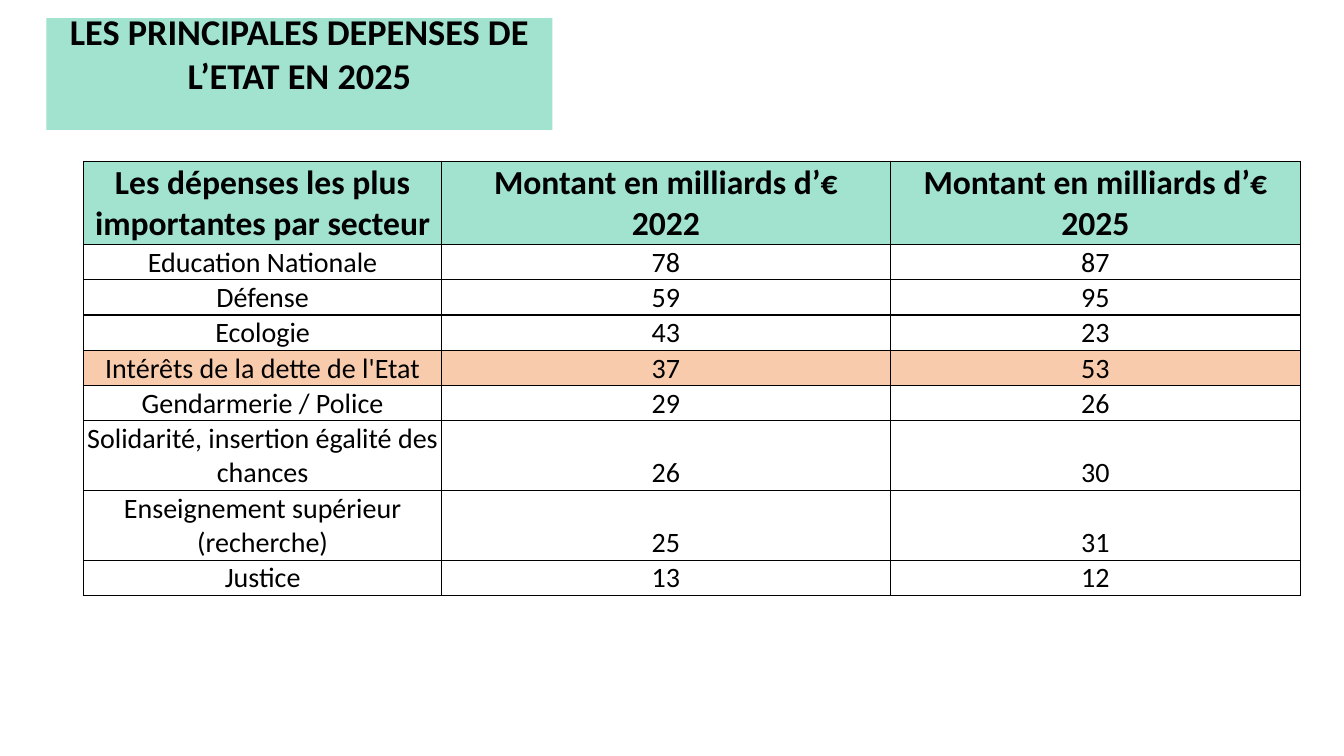
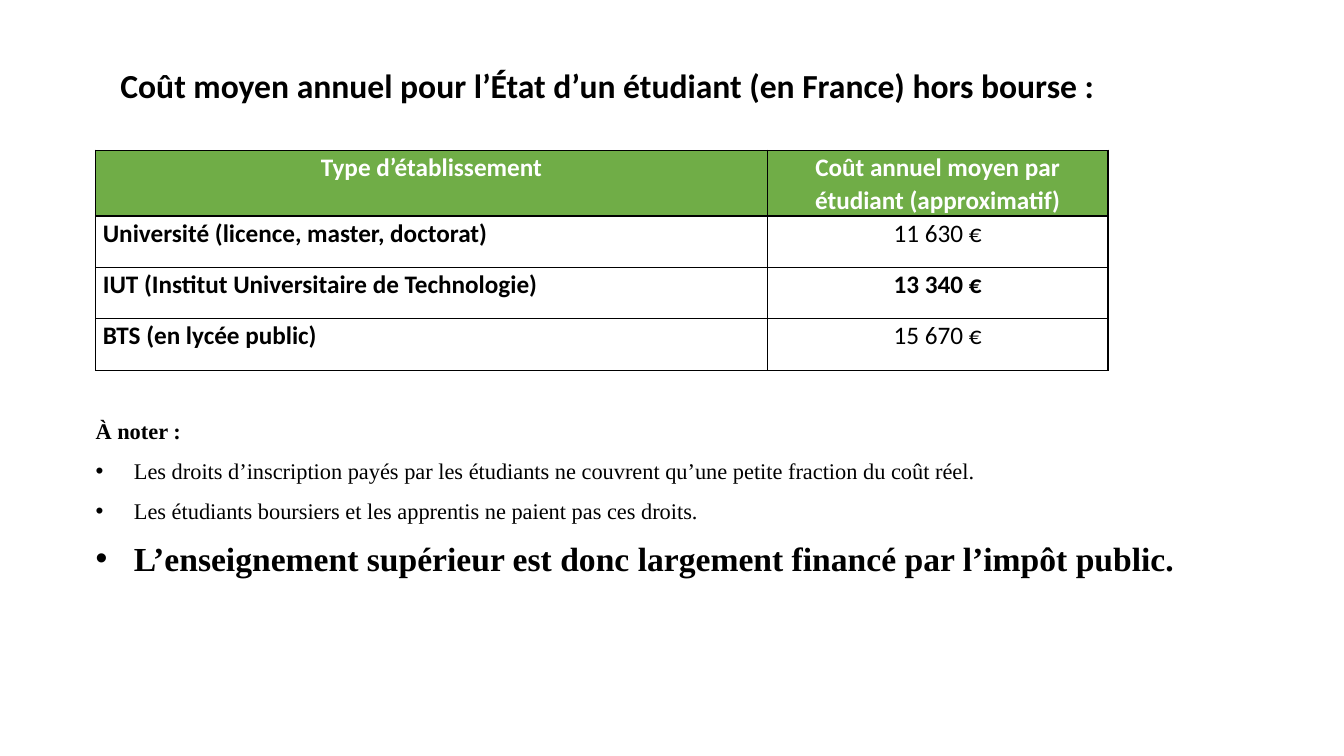
"""Two slides on state spending and the yearly cost of a student."""
from lxml import etree
from pptx import Presentation
from pptx import util as u
from pptx.dml.color import RGBColor
from pptx.enum import shapes, text
from pptx.oxml import ns

MINT = RGBColor(0xA1, 0xE3, 0xCF)
PEACH = RGBColor(0xF8, 0xCB, 0xAD)
GREEN = RGBColor(0x70, 0xAD, 0x47)
WHITE = RGBColor(255, 255, 255)
BLACK = RGBColor(0, 0, 0)
SANS, SERIF = "Calibri", "Times New Roman"
MID, LEFT = text.PP_ALIGN.CENTER, text.PP_ALIGN.LEFT
TOP, CORE, LOW = text.MSO_ANCHOR.TOP, text.MSO_ANCHOR.MIDDLE, text.MSO_ANCHOR.BOTTOM

HEAD = "LES PRINCIPALES DEPENSES DE L’ETAT EN 2025"
SPEND = [
    ("Les dépenses les plus importantes par secteur",
     "Montant en milliards d’€\n2022", "Montant en milliards d’€\n2025"),
    ("Education Nationale", 78, 87),
    ("Défense", 59, 95),
    ("Ecologie", 43, 23),
    ("Intérêts de la dette de l'Etat", 37, 53),
    ("Gendarmerie / Police", 29, 26),
    ("Solidarité, insertion égalité des chances", 26, 30),
    ("Enseignement supérieur (recherche)", 25, 31),
    ("Justice", 13, 12),
]
DEBT = 4

ASK = "Coût moyen annuel pour l’État d’un étudiant (en France) hors bourse :"
COST = [
    ("Type d’établissement", "Coût annuel moyen par étudiant (approximatif)"),
    ("Université (licence, master, doctorat)", "11 630 €"),
    ("IUT (Institut Universitaire de Technologie)", "13 340 €"),
    ("BTS (en lycée public)", "15 670 €"),
]
IUT = 2
NOTES = [
    ("À noter :", 16, True, False),
    ("Les droits d’inscription payés par les étudiants ne couvrent "
     "qu’une petite fraction du coût réel.", 16, False, True),
    ("Les étudiants boursiers et les apprentis ne paient pas ces droits.", 16, False, True),
    ("L’enseignement supérieur est donc largement financé par l’impôt public.", 24, True, True),
]


def inch(*vals):
    return [u.Inches(v) for v in vals]


def style(par, size, bold=False, color=BLACK, face=SANS, **form):
    font = par.font
    font.color.rgb = color
    for key, val in dict(size=u.Pt(size), bold=bold, name=face).items():
        setattr(font, key, val)
    for key, val in form.items():
        setattr(par, key, val)


def pad(item, sides):
    for side, val in zip(("left", "top", "right", "bottom"), inch(*sides)):
        setattr(item, "margin_" + side, val)


def edge(cell):
    props = cell._tc.get_or_add_tcPr()
    for side in "LRTB":
        line = etree.SubElement(props, ns.qn("a:ln" + side), w=str(u.Pt(1)))
        fill = etree.SubElement(line, ns.qn("a:solidFill"))
        etree.SubElement(fill, ns.qn("a:srgbClr"), val=str(BLACK))


def grid(slide, data, spot, cols, high, sides, anchor, look):
    box = inch(*spot, sum(cols), high * len(data))
    table = slide.shapes.add_table(len(data), len(cols), *box).table
    for col, wide in zip(table.columns, inch(*cols)):
        col.width = wide
    for r, vals in enumerate(data):
        table.rows[r].height = u.Inches(high)
        for c, val in enumerate(vals):
            cell = table.cell(r, c)
            cell.text = str(val)
            cell.vertical_anchor = anchor
            pad(cell, sides)
            edge(cell)
            fill, form = look(r, c)
            cell.fill.solid()
            cell.fill.fore_color.rgb = fill
            for par in cell.text_frame.paragraphs:
                style(par, **form)


def spend_look(r, c):
    fill = {0: MINT, DEBT: PEACH}.get(r, WHITE)
    return fill, dict(size=20 if r else 24, bold=not r, alignment=MID)


def cost_look(r, c):
    form = dict(size=18, bold=c == 0 or r in (0, IUT), color=BLACK if r else WHITE,
                alignment=LEFT if r and not c else MID, line_spacing=1.07)
    return WHITE if r else GREEN, form


def label(shape, words, size, sides):
    frame = shape.text_frame
    frame.word_wrap = True
    frame.vertical_anchor = CORE
    pad(frame, sides)
    frame.text = words
    style(frame.paragraphs[0], size, True, alignment=MID)


def bullet(par):
    props = par._p.get_or_add_pPr()
    hang = u.Inches(0.38)
    props.set("marL", str(hang))
    props.set("indent", str(-hang))
    etree.SubElement(props, ns.qn("a:buFont"), typeface="Arial")
    etree.SubElement(props, ns.qn("a:buChar"), char="•")


def remark(slide):
    frame = slide.shapes.add_textbox(*inch(0.85, 4.07, 11.62, 1.71)).text_frame
    frame.word_wrap = True
    for i, (words, size, bold, dot) in enumerate(NOTES):
        par = frame.add_paragraph() if i else frame.paragraphs[0]
        par.text = words
        style(par, size, bold, face=SERIF, line_spacing=1.07, space_after=u.Pt(8))
        if dot:
            bullet(par)


def main():
    deck = Presentation()
    deck.slide_width, deck.slide_height = inch(13.33, 7.5)
    first, second = [deck.slides.add_slide(deck.slide_layouts[6]) for _ in range(2)]

    grid(first, SPEND, (0.83, 1.6), (3.55, 4.45, 4.07), 0.21,
         (0.01, 0.01, 0.01, 0), LOW, spend_look)
    band = first.shapes.add_shape(shapes.MSO_SHAPE.RECTANGLE, *inch(0.46, 0.18, 5.02, 1.11))
    band.shadow.inherit = False
    band.fill.solid()
    band.fill.fore_color.rgb = MINT
    band.line.fill.background()
    label(band, HEAD, 25.9, (0.1, 0, 0.1, 0.42))

    grid(second, COST, (0.95, 1.49), (6.66, 3.38), 0.51,
         (0.07, 0, 0.07, 0), TOP, cost_look)
    title = second.shapes.add_textbox(*inch(0.95, 0.59, 10.15, 0.5))
    label(title, ASK, 24, (0.1, 0.05, 0.1, 0.05))
    remark(second)
    deck.save("out.pptx")


if __name__ == "__main__":
    main()
